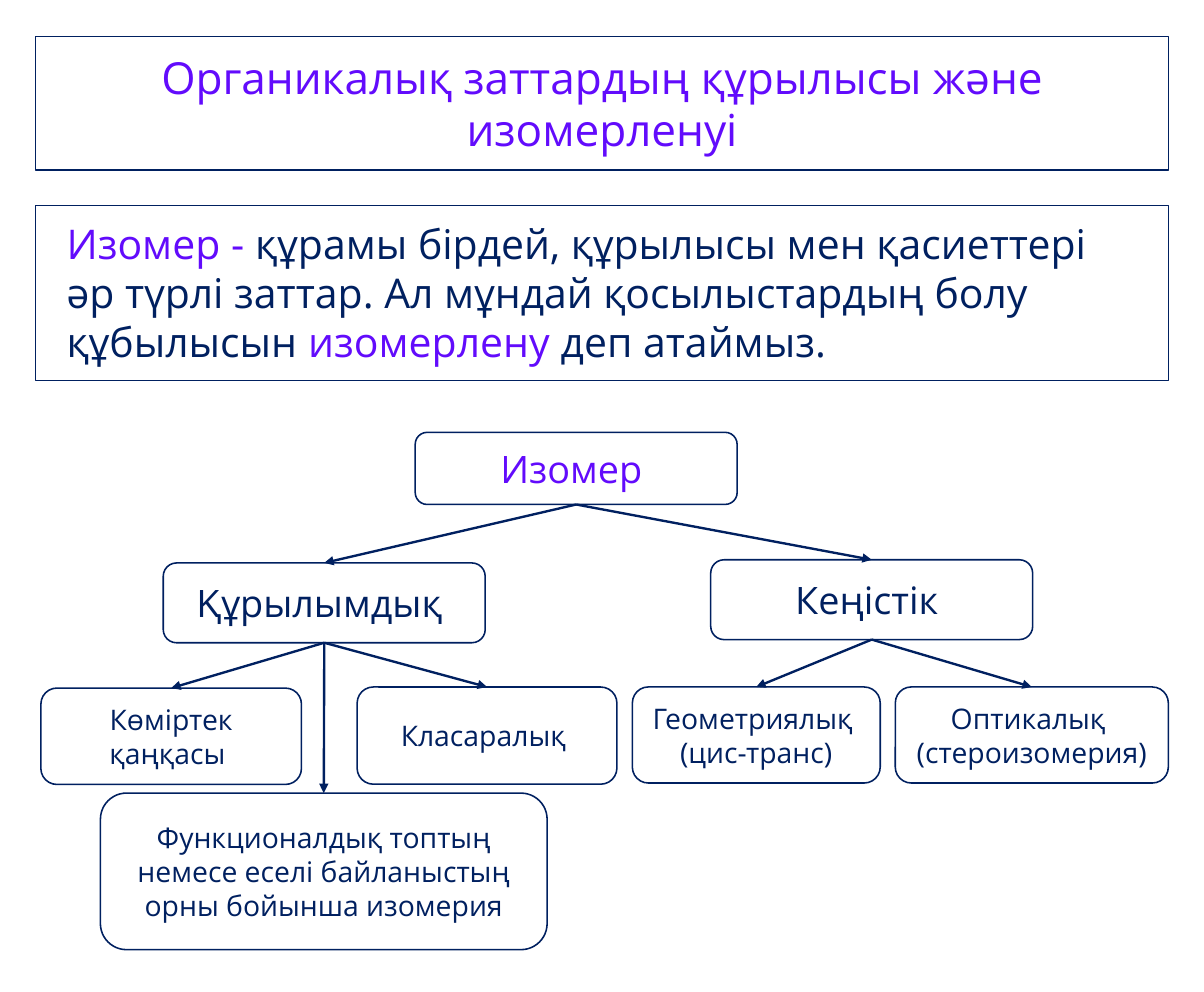
from pptx import Presentation
from pptx.dml.color import RGBColor
from pptx.enum import shapes, text
from pptx.oxml.ns import qn
from pptx.util import Pt
from lxml import etree

# Content
FONT = "Open Sans"
NAVY, VIOLET, WHITE = "002060", "620BFC", "FFFFFF"
SLIDE_W, SLIDE_H = 764.64, 630

# Panels: top, height, size, alignment, runs
PANELS = [
    (23.04, 84.96, 28, text.PP_ALIGN.CENTER,
     [("Органикалық заттардың құрылысы және изомерленуі", VIOLET)]),
    (130.32, 111.6, 26, text.PP_ALIGN.LEFT,
     [("Изомер -", VIOLET),
      (" құрамы бірдей, құрылысы мен қасиеттері әр түрлі заттар. "
       "Ал мұндай қосылыстардың болу құбылысын ", NAVY),
      ("изомерлену ", VIOLET),
      ("деп атаймыз.", NAVY)]),
]

# Tree nodes: left, top, width, height, size, colour, lines
NODES = {
    "isomer": (263.7, 274.6, 204.5, 45.8, 24, VIOLET, ["Изомер "]),
    "structural": (103.7, 357.5, 204.5, 50.7, 24, NAVY, ["Құрылымдық "]),
    "spatial": (451.4, 355.5, 204.5, 50.7, 24, NAVY, ["Кеңістік "]),
    "skeleton": (26, 437, 165.5, 61.2, 18, NAVY, ["Көміртек қаңқасы "]),
    "interclass": (226.8, 436.3, 165, 61.7, 18, NAVY, ["Класаралық "]),
    "geometric": (401.6, 436.3, 157.4, 61, 18, NAVY, ["Геометриялық ", "(цис-транс)"]),
    "optical": (568.6, 436.3, 173.4, 61, 18, NAVY, ["Оптикалық ", "(стероизомерия)"]),
    "position": (63.8, 503.7, 283.7, 99.4, 18, NAVY,
                 ["Функционалдық топтың немесе еселі байланыстың "
                  "орны бойынша изомерия"]),
}
BRANCHES = {
    "isomer": ["structural", "spatial"],
    "structural": ["skeleton", "interclass", "position"],
    "spatial": ["geometric", "optical"],
}


def rgb(colour):
    return RGBColor.from_string(colour)


def add_box(kind, left, top, width, height, line_width):
    sp = s.shapes.add_shape(kind, Pt(left), Pt(top), Pt(width), Pt(height))
    sp.shadow.inherit = False
    sp.line.color.rgb = rgb(NAVY)
    sp.line.width = Pt(line_width)
    sp.text_frame.word_wrap = True
    return sp


def add_run(p, words, size, colour):
    r = p.add_run()
    r.text = words
    r.font.name = FONT
    r.font.size = Pt(size)
    r.font.color.rgb = rgb(colour)


def add_arrow(parent, child):
    x1, y1, w1, h1 = NODES[parent][:4]
    x2, y2, w2 = NODES[child][:3]
    c = s.shapes.add_connector(shapes.MSO_CONNECTOR.STRAIGHT, Pt(x1 + w1 / 2),
                               Pt(y1 + h1), Pt(x2 + w2 / 2), Pt(y2))
    c.line.color.rgb = rgb(NAVY)
    c.line.width = Pt(1.5)
    etree.SubElement(c.line._get_or_add_ln(), qn("a:tailEnd"), type="triangle")
    etree.SubElement(c._element.spPr, qn("a:effectLst"))


prs = Presentation()
prs.slide_width, prs.slide_height = Pt(SLIDE_W), Pt(SLIDE_H)
s = prs.slides.add_slide(prs.slide_layouts[6])

# Title and definition panels
for top, height, size, align, runs in PANELS:
    sp = add_box(shapes.MSO_SHAPE.RECTANGLE, 22.32, top, 720, height, 0.75)
    sp.fill.background()
    tf = sp.text_frame
    tf.vertical_anchor = text.MSO_ANCHOR.TOP
    tf.margin_left = tf.margin_right = Pt(20)
    tf.margin_top = tf.margin_bottom = Pt(8.64)
    p = tf.paragraphs[0]
    p.alignment = align
    for words, colour in runs:
        add_run(p, words, size, colour)

# Tree nodes
for left, top, width, height, size, colour, lines in NODES.values():
    sp = add_box(shapes.MSO_SHAPE.ROUNDED_RECTANGLE, left, top, width, height, 1)
    sp.fill.solid()
    sp.fill.fore_color.rgb = rgb(WHITE)
    tf = sp.text_frame
    tf.vertical_anchor = text.MSO_ANCHOR.MIDDLE
    for i, words in enumerate(lines):
        p = tf.add_paragraph() if i else tf.paragraphs[0]
        p.alignment = text.PP_ALIGN.CENTER
        add_run(p, words, size, colour)

# Arrows from each node to its children
for parent, children in BRANCHES.items():
    for child in children:
        add_arrow(parent, child)

prs.save("out.pptx")
